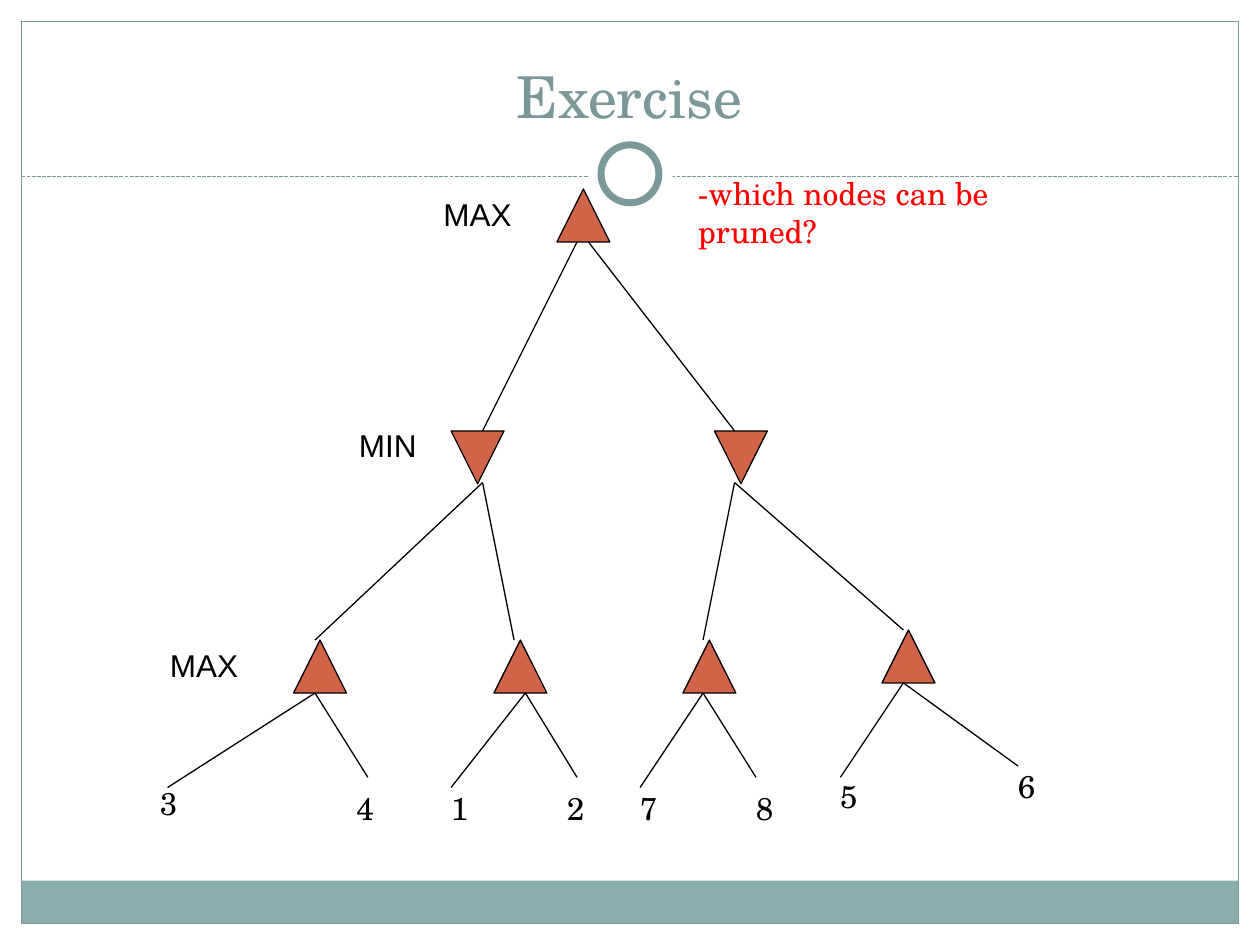
from collections import namedtuple

from lxml.etree import SubElement
from pptx import Presentation
from pptx.dml.color import RGBColor
from pptx.enum.dml import MSO_LINE
from pptx.enum.shapes import MSO_CONNECTOR, MSO_SHAPE
from pptx.enum.text import MSO_ANCHOR, PP_ALIGN
from pptx.oxml.ns import qn
from pptx.util import Emu, Pt

PX = 9144  # EMU in one px, at 100 px to the inch
WHITE = RGBColor(0xFF, 0xFF, 0xFF)
BLACK = RGBColor(0, 0, 0)
RED = RGBColor(0xFF, 0, 0)
SLATE = RGBColor(0x7C, 0x99, 0x9A)
TITLE_SLATE = RGBColor(0x7B, 0x98, 0x99)
TEAL = RGBColor(0x8C, 0xAD, 0xAE)
RUST = RGBColor(0xD1, 0x63, 0x49)
SERIF = "TeX Gyre Schola"
SANS = "Arial"

NODE = 42
Box = namedtuple("Box", "left top width height")
Node = namedtuple("Node", "left top is_min")
Fan = namedtuple("Fan", "start ends")
Label = namedtuple("Label", "text left top")

NODES = [
    Node(342, 0, False),
    Node(258, 192, True), Node(467, 192, True),
    Node(133, 358, False), Node(292, 358, False),
    Node(442, 358, False), Node(600, 350, False),
]
FANS = [
    Fan((358, 42), [(283, 192)]),
    Fan((367, 42), [(483, 192)]),
    Fan((283, 233), [(150, 358), (308, 358)]),
    Fan((483, 233), [(458, 358), (617, 350)]),
    Fan((150, 400), [(33, 475), (192, 467)]),
    Fan((317, 400), [(258, 475), (358, 467)]),
    Fan((458, 400), [(408, 475), (500, 467)]),
    Fan((617, 392), [(567, 467), (708, 458)]),
]
LEAVES = [
    Label("3", 17, 467), Label("4", 173, 471), Label("1", 248, 471),
    Label("2", 340, 471), Label("7", 398, 471), Label("8", 490, 471),
    Label("5", 557, 462), Label("6", 698, 454),
]
LEVELS = [Label("MAX", 242, 0), Label("MIN", 175, 183), Label("MAX", 25, 358)]


def px(*lengths):
    return [Emu(length * PX) for length in lengths]


def add_figure(page, kind, box, fill=None, line=None, weight=0.75):
    figure = page.shapes.add_shape(kind, *px(*box))
    figure.shadow.inherit = False
    if fill is None:
        figure.fill.background()
    else:
        figure.fill.solid()
        figure.fill.fore_color.rgb = fill
    if line is None:
        figure.line.fill.background()
    else:
        figure.line.color.rgb = line
        figure.line.width = Pt(weight)
    return figure


def add_line(page, start, end, color=BLACK, dash=None):
    line = page.shapes.add_connector(MSO_CONNECTOR.STRAIGHT, *px(*start, *end))
    line.line.color.rgb = color
    line.line.width = Pt(0.75)
    if dash is not None:
        line.line.dash_style = dash
    SubElement(line._element.spPr, qn("a:effectLst"))


def write(shape, text, font=SERIF, size=18, color=BLACK,
          align=PP_ALIGN.LEFT, anchor=MSO_ANCHOR.TOP):
    frame = shape.text_frame
    frame.word_wrap = True
    frame.vertical_anchor = anchor
    para = frame.paragraphs[0]
    para.alignment = align
    span = para.add_run()
    span.text = text
    span.font.name = font
    span.font.size = Pt(size)
    span.font.color.rgb = color


def add_text(page, text, box, **style):
    write(page.shapes.add_textbox(*px(*box)), text, **style)


def add_frame(page, box):
    """Draw the border, the footer band, the dashed rule and its ring."""
    left, top, width, height = box
    band, ring_middle, rule = 34, left + width // 2, top + 123
    add_figure(page, MSO_SHAPE.RECTANGLE,
               Box(left, top + height - band, width, band), fill=TEAL)
    add_figure(page, MSO_SHAPE.RECTANGLE, box, line=SLATE)
    add_line(page, (left, rule), (left + width, rule), SLATE, MSO_LINE.SQUARE_DOT)
    for size, line in ((67, None), (46, SLATE)):
        ring = Box(ring_middle - size // 2, top + 121 - size // 2, size, size)
        add_figure(page, MSO_SHAPE.OVAL, ring, fill=WHITE, line=line, weight=4)


def add_title(page, box, text):
    title = page.shapes.title
    title.left, title.top, title.width, title.height = px(*box)
    write(title, text, size=33, color=TITLE_SLATE,
          align=PP_ALIGN.CENTER, anchor=MSO_ANCHOR.BOTTOM)


def add_tree(page, box):
    def place(left, top):
        return box.left + left, box.top + top

    for node in NODES:
        triangle = add_figure(page, MSO_SHAPE.ISOSCELES_TRIANGLE,
                              Box(*place(node.left, node.top), NODE, NODE),
                              fill=RUST, line=BLACK)
        triangle.rotation = 180 if node.is_min else 0
    for fan in FANS:
        for end in fan.ends:
            add_line(page, place(*fan.start), place(*end))
    for leaf in LEAVES:
        add_text(page, leaf.text, Box(*place(leaf.left, leaf.top), 34, 40))
    for level in LEVELS:
        add_text(page, level.text, Box(*place(level.left, level.top), 88, 42), font=SANS)


def main():
    deck = Presentation()
    deck.slide_width, deck.slide_height = px(1000, 750)
    page = deck.slides.add_slide(deck.slide_layouts[5])
    add_frame(page, Box(17, 17, 966, 716))
    add_title(page, Box(33, 25, 933, 83), "Exercise")
    add_tree(page, Box(100, 150, 732, 511))
    add_text(page, "-which nodes can be pruned?", Box(544, 133, 348, 70), color=RED)
    deck.save("out.pptx")


if __name__ == "__main__":
    main()
